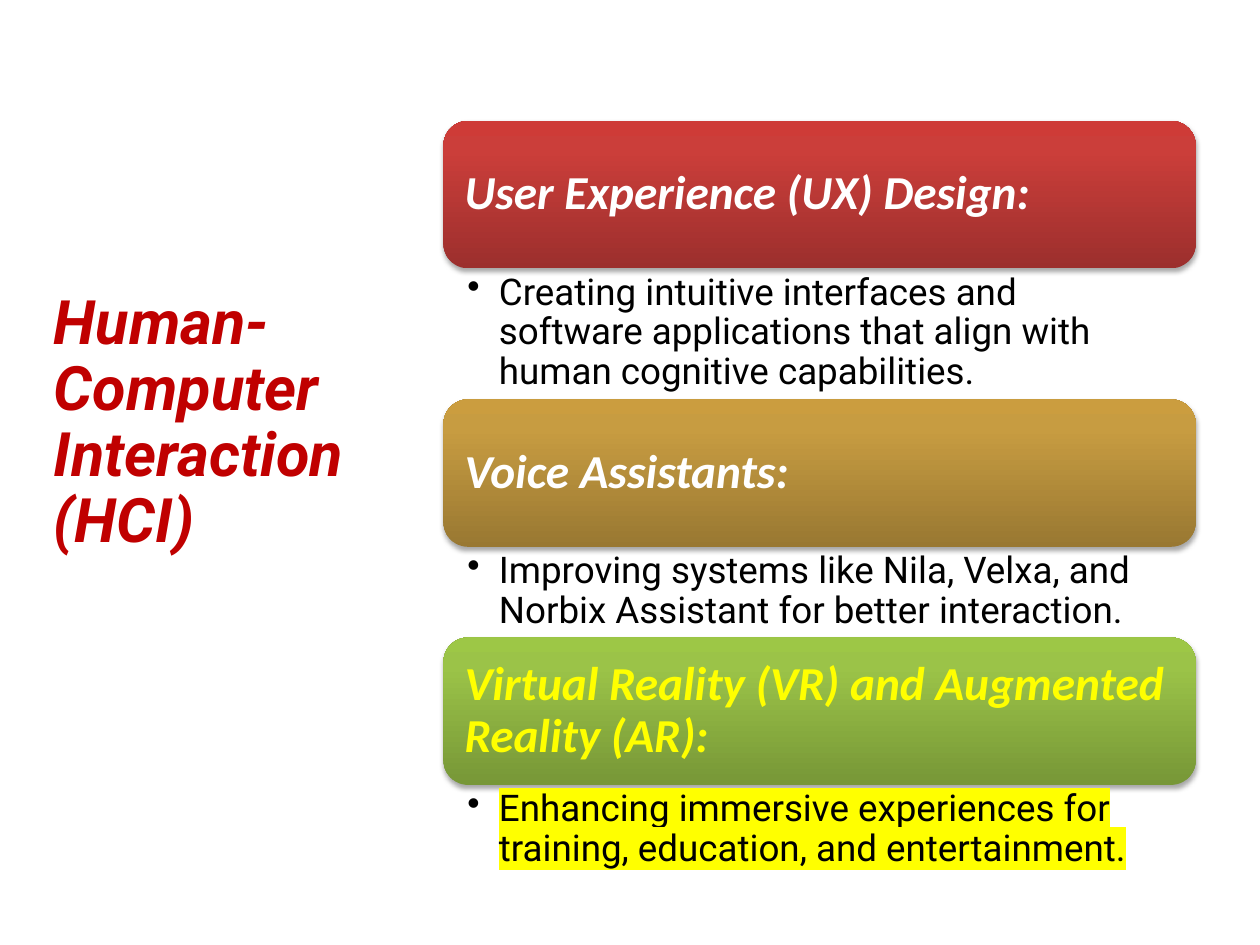
from copy import deepcopy
from dataclasses import dataclass

from pptx import Presentation
from pptx.dml.color import RGBColor
from pptx.enum.shapes import MSO_SHAPE
from pptx.enum.text import MSO_ANCHOR, PP_ALIGN
from pptx.oxml import parse_xml
from pptx.oxml.ns import nsdecls, qn
from pptx.util import Inches, Pt

COLORS = {
    "title": "C00000",
    "white": "FFFFFF",
    "black": "000000",
    "yellow": "FFFF00",
}
GRADIENTS = {
    "red": ("9C2F2D", "CB3E3A", "CE3B37"),
    "gold": ("997832", "C79C41", "CB9D3F"),
    "green": ("779737", "9BC348", "9DC746"),
}
STOPS = (0, 0.8, 1)
LEFT, TOP, WIDTH, BAR_HEIGHT = 3.52, 0.96, 5.97, 1.17

TITLE_FONT = {"name": "Roboto", "size": Pt(35), "bold": True, "italic": True}
HEADING_FONT = {"name": "Calibri", "size": Pt(27), "bold": True, "italic": True}
BODY_FONT = {"name": "Roboto", "size": Pt(21)}


@dataclass
class Topic:
    heading: str
    body: str
    gradient: str
    body_height: float
    heading_color: str = "white"
    highlight: str = ""


TOPICS = [
    Topic("User Experience (UX) Design:",
          "Creating intuitive interfaces and software applications that align "
          "with human cognitive capabilities.", "red", 1.04),
    Topic("Voice Assistants:",
          "Improving systems like Nila, Velxa, and Norbix Assistant for better "
          "interaction.", "gold", 0.72),
    Topic("Virtual Reality (VR) and Augmented Reality (AR):",
          "Enhancing immersive experiences for training, education, and "
          "entertainment.", "green", 0.72, "yellow", "yellow"),
]


def write_text(sp, text: str, font: dict, color: str, insets: tuple, anchor):
    """Fill a shape with one paragraph; insets are left, top, right, bottom."""
    tf = sp.text_frame
    tf.word_wrap = True
    tf.vertical_anchor = anchor
    for side, inset in zip(("left", "top", "right", "bottom"), insets):
        setattr(tf, f"margin_{side}", Inches(inset))
    p = tf.paragraphs[0]
    p.alignment = PP_ALIGN.LEFT
    p.line_spacing = 0.9
    r = p.add_run()
    r.text = text
    for name, value in font.items():
        setattr(r.font, name, value)
    r.font.color.rgb = RGBColor.from_string(COLORS[color])
    return p


def add_text_box(slide, box: tuple):
    return slide.shapes.add_textbox(*(Inches(v) for v in box))


def fill_gradient(sp, colors: tuple) -> None:
    """Run the gradient from the bottom edge up to the top edge."""
    sp.fill.gradient()
    sp.fill.gradient_angle = 90
    stop_list = sp._element.spPr.find(qn("a:gradFill")).find(qn("a:gsLst"))
    stop_list.append(deepcopy(stop_list[0]))
    for stop, position, color in zip(sp.fill.gradient_stops, STOPS, colors):
        stop.position = position
        stop.color.rgb = RGBColor.from_string(color)


def add_shadow(sp) -> None:
    sp.shadow.inherit = False
    sp._element.spPr.find(qn("a:effectLst")).append(parse_xml(
        f'<a:outerShdw {nsdecls("a")} blurRad="{Pt(3.1)}" dist="{Pt(1.8)}" '
        f'dir="5400000" rotWithShape="0"><a:srgbClr val="{COLORS["black"]}">'
        '<a:alpha val="35000"/></a:srgbClr></a:outerShdw>'))


def add_bullet(p) -> None:
    pPr = p._p.get_or_add_pPr()
    pPr.set("marL", str(Inches(0.25)))
    pPr.set("indent", str(-Inches(0.25)))
    pPr.append(parse_xml(f'<a:buChar {nsdecls("a")} char="•"/>'))


def highlight(p, color: str) -> None:
    latin = p.runs[0]._r.rPr.find(qn("a:latin"))
    latin.addprevious(parse_xml(
        f'<a:highlight {nsdecls("a")}><a:srgbClr val="{COLORS[color]}"/>'
        '</a:highlight>'))


def add_topic(slide, topic: Topic, top: float) -> float:
    """Draw a heading bar with its bullet below and return the bottom edge."""
    bar = slide.shapes.add_shape(
        MSO_SHAPE.ROUNDED_RECTANGLE,
        *(Inches(v) for v in (LEFT, top, WIDTH, BAR_HEIGHT)))
    fill_gradient(bar, GRADIENTS[topic.gradient])
    bar.line.fill.background()
    add_shadow(bar)
    write_text(bar, topic.heading, HEADING_FONT, topic.heading_color,
               (0.11,) * 4, MSO_ANCHOR.MIDDLE)

    top += BAR_HEIGHT
    body = add_text_box(slide, (LEFT, top, WIDTH, topic.body_height))
    p = write_text(body, topic.body, BODY_FONT, "black",
                   (0.19, 0.04, 0.21, 0.04), MSO_ANCHOR.TOP)
    add_bullet(p)
    if topic.highlight:
        highlight(p, topic.highlight)
    return top + topic.body_height


def main() -> None:
    prs = Presentation()
    prs.slide_width, prs.slide_height = Inches(10), Inches(7.5)
    s = prs.slides.add_slide(prs.slide_layouts[6])

    title = add_text_box(s, (0.33, 1.84, 3.08, 2.62))
    write_text(title, "Human-Computer Interaction (HCI)", TITLE_FONT, "title",
               (0.1, 0.05, 0.1, 0.05), MSO_ANCHOR.BOTTOM)

    top = TOP
    for topic in TOPICS:
        top = add_topic(s, topic, top)
    prs.save("out.pptx")


if __name__ == "__main__":
    main()
